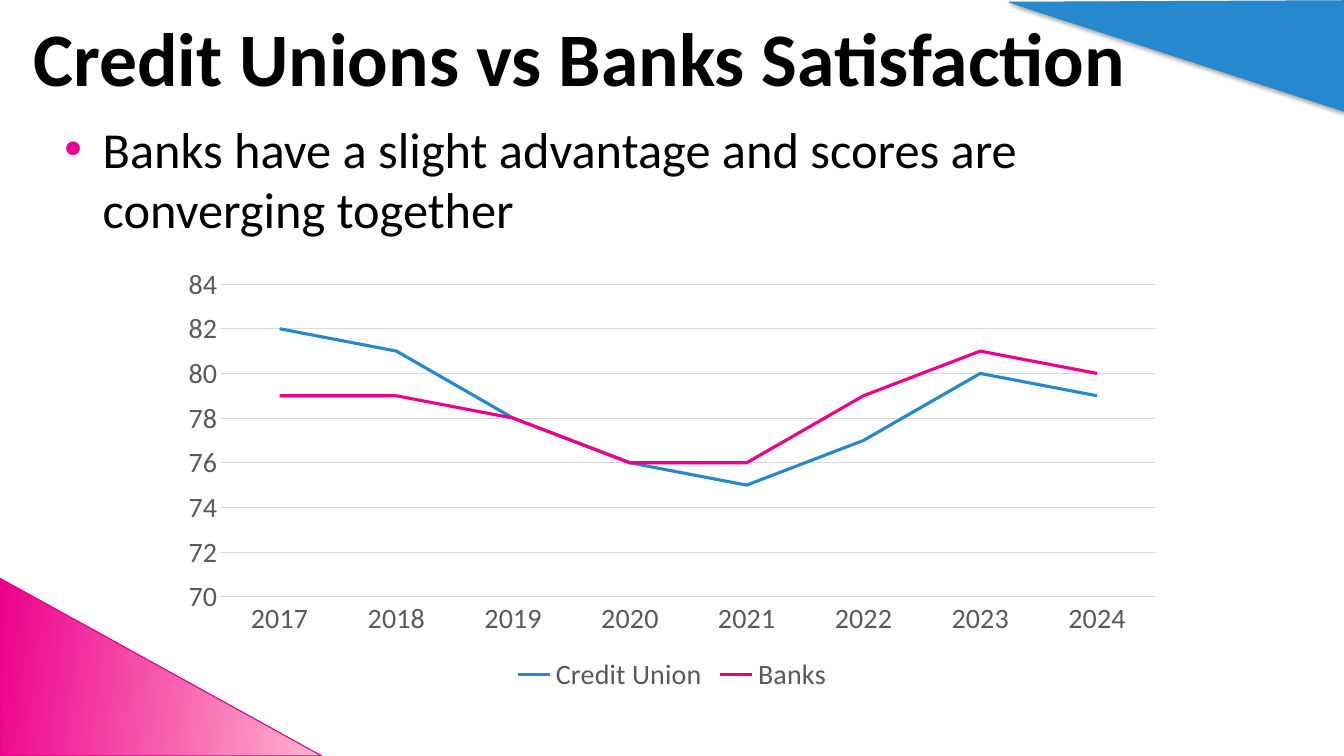
from dataclasses import dataclass

from lxml.etree import SubElement
from pptx import Presentation
from pptx.chart.data import CategoryChartData
from pptx.dml.color import RGBColor as RGB
from pptx.enum.chart import XL_CHART_TYPE as ChartType, XL_LEGEND_POSITION as LegendPos
from pptx.enum.chart import XL_TICK_MARK as Tick
from pptx.enum.text import MSO_ANCHOR as Anchor
from pptx.oxml.ns import qn
from pptx.util import Inches, Pt

W, H = Inches(13.33), Inches(7.5)


@dataclass(frozen=True)
class Theme:
    font: str = "Calibri"
    title: int = 54
    body: int = 36
    chart: int = 20
    ink: RGB = RGB(0, 0, 0)
    label: RGB = RGB(0x59, 0x59, 0x59)
    grid: RGB = RGB(0xD9, 0xD9, 0xD9)
    blue: RGB = RGB(0x26, 0x88, 0xCD)
    pink: RGB = RGB(0xED, 0x00, 0x8C)
    pale_pink: RGB = RGB(0xFF, 0xB4, 0xCD)
    pink_edge: RGB = RGB(0xE8, 0x00, 0x89)


THEME = Theme()


def share(x, y):
    """Turn percentages of the slide's width and height into lengths."""
    return round(W * x / 100), round(H * y / 100)


def set_font(font, size, color, bold=False):
    font.name, font.size, font.bold = THEME.font, Pt(size), bold
    font.color.rgb = color


def add_corner(s, points, edge):
    """Triangle in a slide corner, with a soft shadow below it."""
    start, *rest = [share(*point) for point in points]
    builder = s.shapes.build_freeform(*start)
    builder.add_line_segments(rest, close=True)
    sp = builder.convert_to_shape()
    sp.line.color.rgb, sp.line.width = edge, Pt(0.75)
    sp.shadow.inherit = False
    effects = sp._element.spPr.find(qn("a:effectLst"))
    shadow = SubElement(effects, qn("a:outerShdw"), blurRad=str(Pt(3.1)), dist=str(Pt(1.8)),
                        dir="5400000", algn="ctr", rotWithShape="0")
    color = SubElement(shadow, qn("a:srgbClr"), val="000000")
    SubElement(color, qn("a:alpha"), val="35000")
    return sp


def add_corners(s):
    # Top right
    top = add_corner(s, [(100, 0.1), (100, 14.7), (75.1, 0.3)], THEME.blue)
    top.fill.solid()
    top.fill.fore_color.rgb = THEME.blue
    # Bottom left
    bottom = add_corner(s, [(0, 76.5), (23.95, 100), (0, 100)], THEME.pink_edge)
    bottom.fill.gradient()
    bottom.fill.gradient_angle = 353.4
    for stop, color in zip(bottom.fill.gradient_stops, (THEME.pink, THEME.pale_pink)):
        stop.color.rgb = color


def add_text(s, box, text, size, bold=False, anchor=Anchor.TOP):
    x, y, w, h = box
    tf = s.shapes.add_textbox(*share(x, y), *share(w, h)).text_frame
    tf.word_wrap = True
    tf.vertical_anchor = anchor
    tf.text = text
    p = tf.paragraphs[0]
    set_font(p.runs[0].font, size, THEME.ink, bold)
    return p


def add_bullet(s, box, text):
    p = add_text(s, box, text, THEME.body)
    p.space_after = Pt(6)
    pPr = p._p.get_or_add_pPr()
    indent = Inches(0.38)
    pPr.set("marL", str(indent))
    pPr.set("indent", str(-indent))
    SubElement(SubElement(pPr, qn("a:buClr")), qn("a:srgbClr"), val=str(THEME.pink))
    SubElement(pPr, qn("a:buFont"), typeface="Arial")
    SubElement(pPr, qn("a:buChar"), char="•")


def add_score_chart(s, box, years, scores):
    data = CategoryChartData(number_format="0")
    data.categories = years
    for name, values, _ in scores:
        data.add_series(name, values)
    x, y, w, h = box
    chart = s.shapes.add_chart(ChartType.LINE, *share(x, y), *share(w, h), data).chart
    set_font(chart.font, THEME.chart, THEME.label)
    chart.has_title = False

    # Legend
    chart.has_legend = True
    chart.legend.position = LegendPos.BOTTOM
    chart.legend.include_in_layout = False
    set_font(chart.legend.font, THEME.chart, THEME.label)

    # Axes
    years_axis, score_axis = chart.category_axis, chart.value_axis
    for axis in (years_axis, score_axis):
        axis.major_tick_mark = axis.minor_tick_mark = Tick.NONE
        set_font(axis.tick_labels.font, THEME.chart, THEME.label)
    score_axis.minimum_scale, score_axis.maximum_scale, score_axis.major_unit = 70, 84, 2
    score_axis.has_major_gridlines = True
    score_axis.format.line.fill.background()
    for line in (years_axis.format.line, score_axis.major_gridlines.format.line):
        line.color.rgb, line.width = THEME.grid, Pt(0.75)

    # Lines
    plot = chart.plots[0]
    plot.vary_by_categories = False
    for series, (_, _, color) in zip(plot.series, scores):
        series.smooth = False
        series.format.line.color.rgb, series.format.line.width = color, Pt(2.25)


def main():
    prs = Presentation()
    prs.slide_width, prs.slide_height = W, H
    s = prs.slides.add_slide(prs.slide_layouts[6])
    add_corners(s)
    add_text(s, (1.73, 2.27, 83.8, 10.27), "Credit Unions vs Banks Satisfaction",
             THEME.title, bold=True, anchor=Anchor.MIDDLE)
    add_bullet(s, (4.05, 14.93, 78.92, 16.67),
               "Banks have a slight advantage and scores are converging together")
    add_score_chart(s, (12.53, 34.13, 74.94, 58.13), [str(year) for year in range(2017, 2025)], [
        ("Credit Union", (82, 81, 78, 76, 75, 77, 80, 79), THEME.blue),
        ("Banks", (79, 79, 78, 76, 76, 79, 81, 80), THEME.pink),
    ])
    prs.save("out.pptx")


if __name__ == "__main__":
    main()
